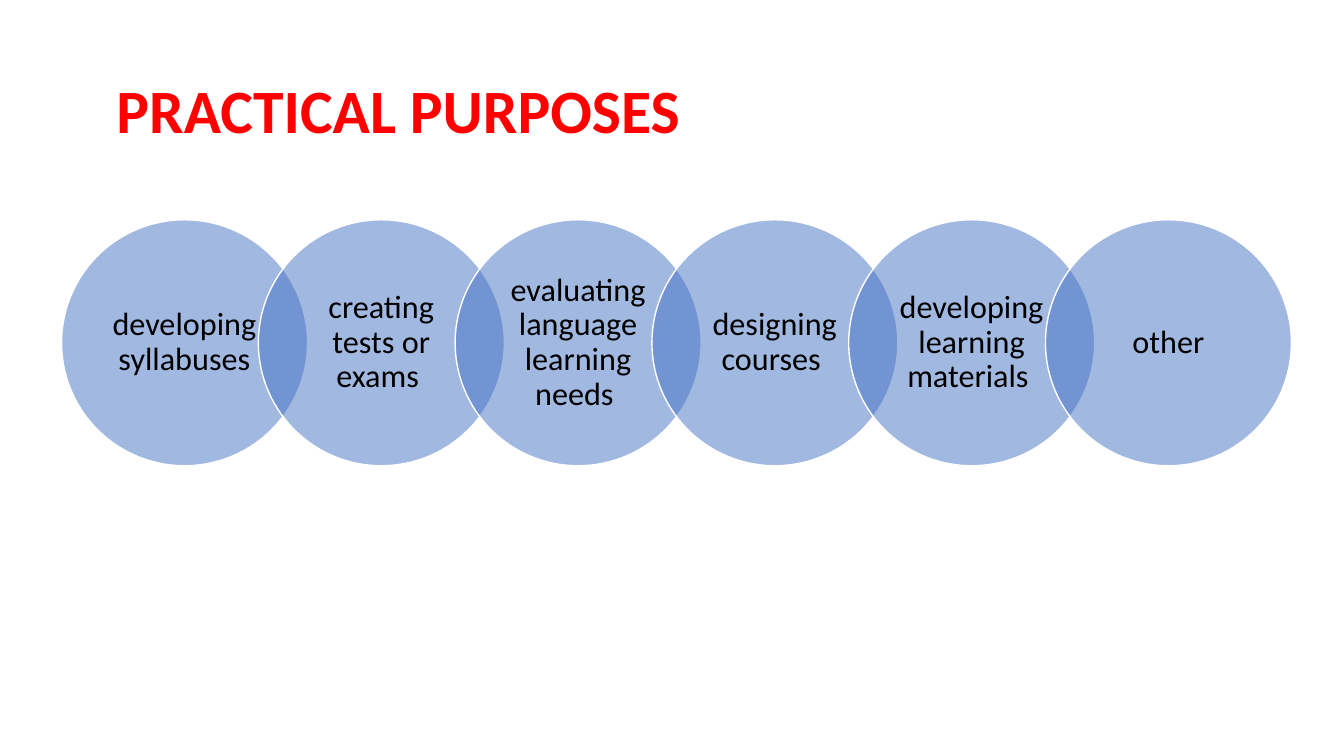
from lxml import etree
from pptx import Presentation
from pptx import util as u
from pptx.dml.color import RGBColor
from pptx.enum import shapes, text
from pptx.oxml.ns import qn

COLOURS = {"title": "FF0000", "circle": "4472C4", "outline": "FFFFFF", "label": "000000"}
FONT = "Calibri"
PURPOSES = [
    "developing syllabuses",
    "creating tests or exams ",
    "evaluating language learning needs ",
    "designing courses ",
    "developing learning materials ",
    "other",
]
CHAIN_LEFT, CHAIN_TOP = 44, 157
DIAMETER = 175.7
STEP = DIAMETER * 0.8


def colour(name):
    return RGBColor.from_string(COLOURS[name])


def write(shape, words, size, colour_name, align, bold=False):
    frame = shape.text_frame
    frame.text = words
    frame.word_wrap = True
    frame.vertical_anchor = text.MSO_ANCHOR.MIDDLE
    para = frame.paragraphs[0]
    para.alignment = align
    para.line_spacing = 0.9
    span = para.runs[0]
    span.font.name = FONT
    span.font.size = u.Pt(size)
    span.font.bold = bold
    span.font.color.rgb = colour(colour_name)


def add_title(page, words):
    title = page.shapes.title
    title.left, title.top = u.Pt(66), u.Pt(28.75)
    title.width, title.height = u.Pt(828), u.Pt(104.4)
    write(title, words, 44, "title", text.PP_ALIGN.LEFT, bold=True)


def add_circle(page, left, words):
    circle = page.shapes.add_shape(
        shapes.MSO_SHAPE.OVAL, u.Pt(left), u.Pt(CHAIN_TOP), u.Pt(DIAMETER), u.Pt(DIAMETER)
    )
    circle.shadow.inherit = False
    circle.fill.solid()
    circle.fill.fore_color.rgb = colour("circle")
    fill = circle._element.spPr.find(qn("a:solidFill"))
    etree.SubElement(fill[0], qn("a:alpha"), val="50000")
    circle.line.color.rgb = colour("outline")
    circle.line.width = u.Pt(1)
    frame = circle.text_frame
    frame.margin_left = frame.margin_right = u.Pt(9.3)
    frame.margin_top = frame.margin_bottom = u.Pt(2.2)
    write(circle, words, 23, "label", text.PP_ALIGN.CENTER)


def main():
    deck = Presentation()
    deck.slide_width, deck.slide_height = u.Pt(960), u.Pt(540)
    page = deck.slides.add_slide(deck.slide_layouts[5])
    add_title(page, " PRACTICAL PURPOSES")
    for index, purpose in enumerate(PURPOSES):
        add_circle(page, CHAIN_LEFT + index * STEP, purpose)
    deck.save("out.pptx")


if __name__ == "__main__":
    main()
